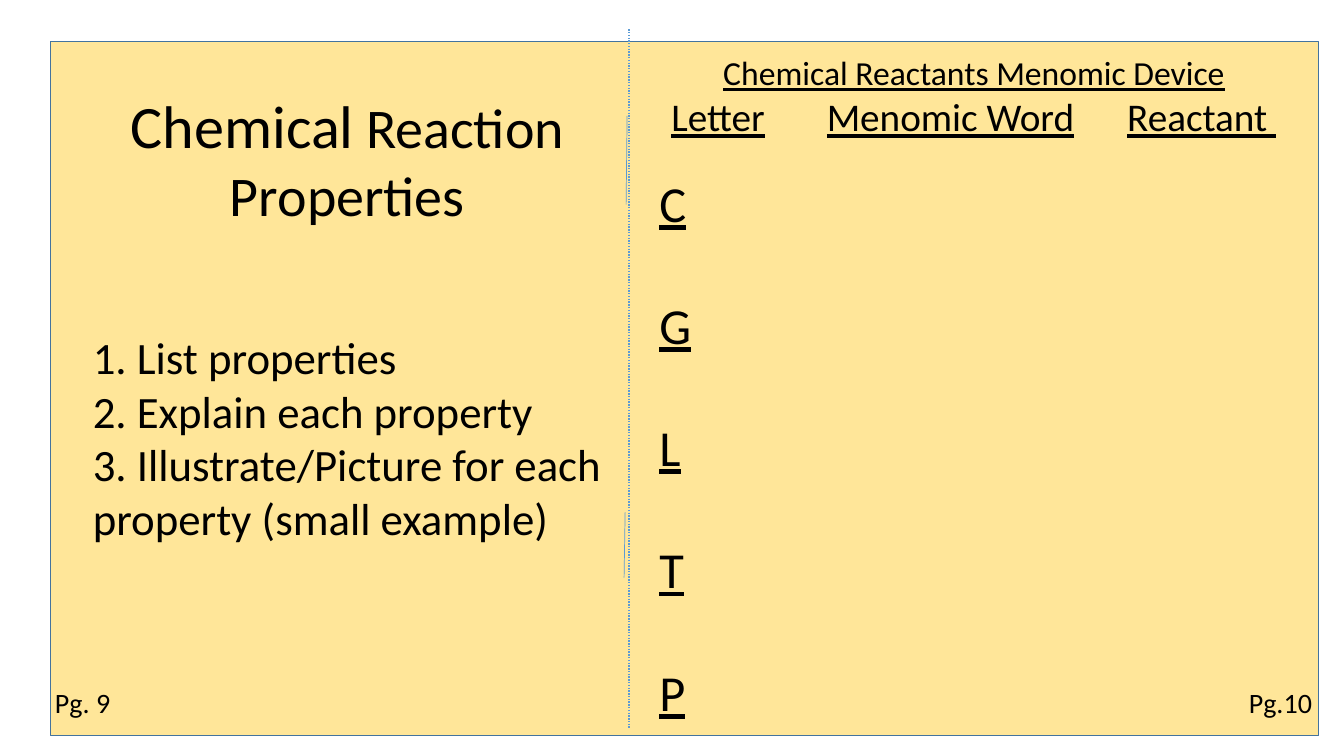
import pptx
import pptx.util
import pptx.dml.color
import pptx.enum.dml
import pptx.enum.shapes
import pptx.enum.text
from lxml import etree
from pptx.util import Inches, Pt

NS = "{http://schemas.openxmlformats.org/drawingml/2006/main}"
ALIGN = pptx.enum.text.PP_ALIGN


def paint(target, color):
    """Give a fill, font or line colour from a hex string."""
    target.rgb = pptx.dml.color.RGBColor.from_string(color)


def write(para, text, size, under=None, align=ALIGN.LEFT, gap=0):
    """Add a run to a paragraph and set the format of both."""
    para.alignment = align
    para.space_before = Pt(gap)
    run = para.add_run()
    run.text = text
    font = run.font
    font.name, font.size, font.underline = "Calibri", Pt(size), under
    paint(font.color, "000000")


def place(shape, left, top, width, height, inset=0.1):
    """Set the place of a text shape, bring it forward, return its frame."""
    shape.left, shape.top = Inches(left), Inches(top)
    shape.width, shape.height = Inches(width), Inches(height)
    shape._element.getparent().append(shape._element)
    frame = shape.text_frame
    frame.word_wrap = True
    frame.auto_size = pptx.enum.text.MSO_AUTO_SIZE.NONE
    frame.vertical_anchor = pptx.enum.text.MSO_ANCHOR.TOP
    frame.margin_left = frame.margin_right = Inches(inset)
    frame.margin_top = frame.margin_bottom = Inches(0.05)
    return frame


def label(slide, left, top, width, height, inset=0.1):
    box = slide.shapes.add_textbox(0, 0, 0, 0)
    return place(box, left, top, width, height, inset)


def items(frame, texts, size, under=None, gap=0):
    """Fill a list without bullets; gap parts the items."""
    for i, text in enumerate(texts):
        para = frame.add_paragraph() if i else frame.paragraphs[0]
        write(para, text, size, under=under, gap=gap if i else 0)
        props = para._p.get_or_add_pPr()
        props.set("marL", "0")
        props.set("indent", "0")
        etree.SubElement(props, NS + "buNone")


def tabs(para, stops):
    """Set left tab stops, in inches."""
    group = etree.SubElement(para._p.get_or_add_pPr(), NS + "tabLst")
    for stop in stops:
        etree.SubElement(group, NS + "tab", pos=str(Inches(stop)), algn="l")


def panel(slide, left, top, width, height):
    shape = slide.shapes.add_shape(
        pptx.enum.shapes.MSO_SHAPE.RECTANGLE,
        Inches(left), Inches(top), Inches(width), Inches(height))
    shape.shadow.inherit = False
    shape.fill.solid()
    paint(shape.fill.fore_color, "FFE699")
    paint(shape.line.color, "43739E")
    shape.line.width = Pt(1)


def rule(slide, x1, y1, x2, y2, width=0.5, dash=None):
    line = slide.shapes.add_connector(
        pptx.enum.shapes.MSO_CONNECTOR.STRAIGHT,
        Inches(x1), Inches(y1), Inches(x2), Inches(y2))
    paint(line.line.color, "5B9BD5")
    line.line.width = Pt(width)
    line.line.dash_style = dash
    etree.SubElement(line._element.spPr, NS + "effectLst")


def main():
    deck = pptx.Presentation()
    deck.slide_width, deck.slide_height = Inches(13.33), Inches(7.5)
    slide = deck.slides.add_slide(deck.slide_layouts[3])
    title, steps, keys = slide.placeholders

    # Page panel and centre fold
    panel(slide, 0.5, 0.41, 12.58, 6.89)
    rule(slide, 6.22, 1.15, 6.21, 2.03)
    rule(slide, 6.2, 5.08, 6.19, 5.73)
    rule(slide, 6.24, 0.29, 6.24, 7.22, width=1,
         dash=pptx.enum.dml.MSO_LINE.ROUND_DOT)

    # Left page
    frame = place(title, 0.82, 0.83, 5.25, 1.51)
    head = frame.paragraphs[0]
    write(head, "Chemical", 43, align=ALIGN.CENTER)
    write(head, " Reaction", 40, align=ALIGN.CENTER)
    write(frame.add_paragraph(), "Properties", 40, align=ALIGN.CENTER)
    items(place(steps, 0.82, 3.22, 5.25, 2.3), [
        "1. List properties",
        "2. Explain each property",
        "3. Illustrate/Picture for each property (small example)",
    ], 32)

    # Right page: headings, then one letter per row
    frame = label(slide, 6.44, 0.47, 6.44, 1, inset=0.22)
    write(frame.paragraphs[0], "Chemical Reactants Menomic Device", 24,
          under=True, align=ALIGN.CENTER)
    row = frame.add_paragraph()
    write(row, "Letter\tMenomic Word\tReactant ", 28, under=True)
    tabs(row, [1.54, 4.52])
    items(place(keys, 6.44, 1.66, 6.44, 5.6), "CGLTP", 36,
          under=True, gap=44)

    # Page numbers
    for text, left, width in [("Pg. 9", 0.04, 1.56), ("Pg.10", 12.06, 1.28)]:
        frame = label(slide, left, 6.75, width, 0.44)
        write(frame.paragraphs[0], text, 20, align=ALIGN.CENTER)

    deck.save("out.pptx")


if __name__ == "__main__":
    main()
